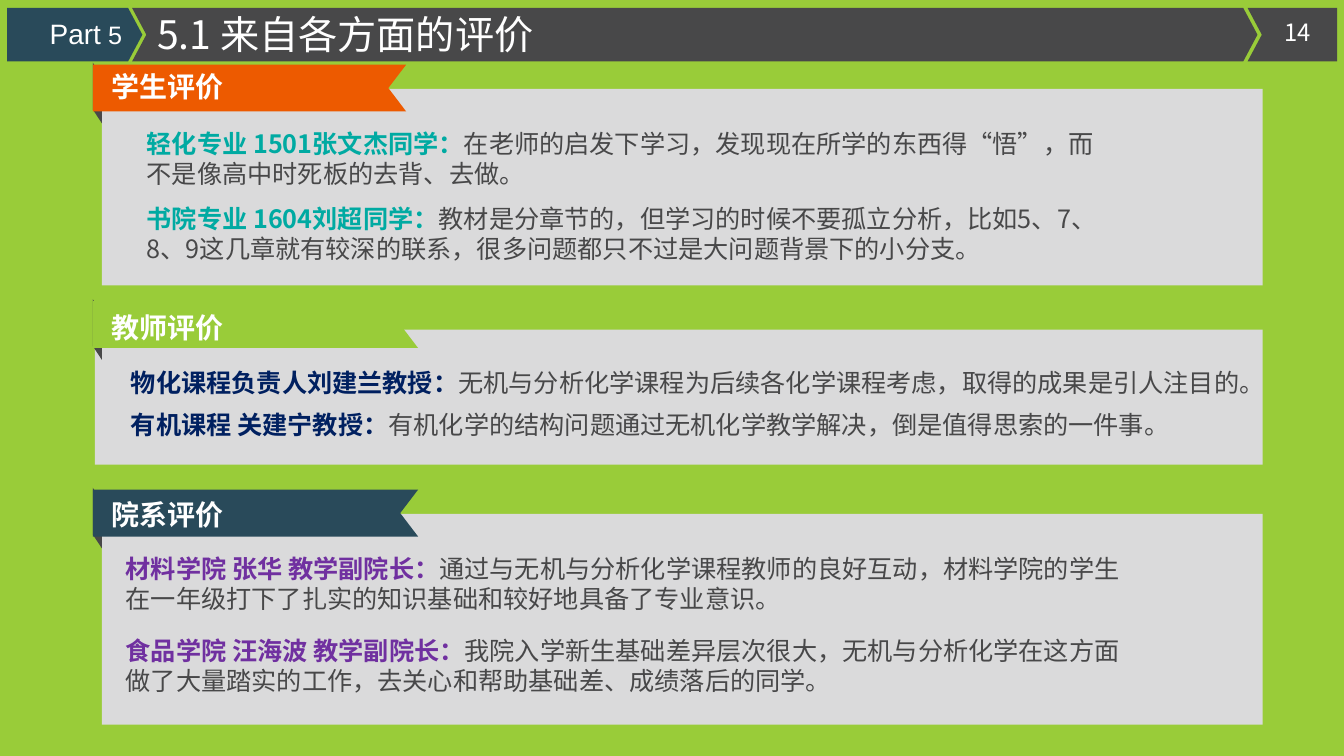
from dataclasses import dataclass
from pptx import Presentation
from pptx import util as u
from pptx.dml import color
from pptx.enum import lang, shapes, text
from pptx.oxml import ns
from lxml import etree


@dataclass(frozen=True)
class Theme:
    """Colours, fonts and type sizes of the deck."""
    green: str = "99CC39"
    navy: str = "294A5A"
    charcoal: str = "484849"
    panel: str = "DADADB"
    orange: str = "ED5A00"
    white: str = "FFFFFF"
    teal: str = "00AAA2"
    deep_blue: str = "002060"
    purple: str = "7030A0"
    latin: str = "Arial"
    chinese: str = "Noto Sans CJK SC"
    title_size: int = 28
    label_size: int = 20
    body_size: int = 18
    number_size: int = 17


THEME = Theme()
ALIGN = text.PP_ALIGN


@dataclass(frozen=True)
class Box:
    """A rectangle in centimetres."""
    left: float
    top: float
    width: float
    height: float

    def inner(self, dx, dy, width, height):
        """Return a box offset from this one's top left corner."""
        return Box(self.left + dx, self.top + dy, width, height)

    def lengths(self):
        """Return left, top, width and height as lengths."""
        return [u.Cm(n) for n in (self.left, self.top, self.width, self.height)]


@dataclass(frozen=True)
class Review:
    """One group of reviews: its label, look and quotes."""
    label: str
    box: Box
    flag_width: float
    flag_color: str
    label_drop: float
    panel_dx: float
    panel_dy: float
    name_color: str
    quote_dx: float
    quotes: tuple


REVIEWS = (
    Review("学生评价", Box(2.34, 1.63, 29.49, 5.56), 7.9, THEME.orange, 0, 0.23, 0.61,
           THEME.teal, 1.11, (
               (1.47, 24.79, "轻化专业 1501张文杰同学：",
                "在老师的启发下学习，发现现在所学的东西得“悟”，而不是像高中时死板的去背、去做。"),
               (3.37, 25.2, "书院专业 1604刘超同学：",
                "教材是分章节的，但学习的时候不要孤立分析，比如5、7、8、9这几章就有较深的联系，"
                "很多问题都只不过是大问题背景下的小分支。"))),
    Review("教师评价", Box(2.34, 7.59, 29.49, 4.12), 8.2, THEME.green, 0.1, 0.05, 0.72,
           THEME.deep_blue, 0.71, (
               (1.53, 29.57, "物化课程负责人刘建兰教授：",
                "无机与分析化学课程为后续各化学课程考虑，取得的成果是引人注目的。"),
               (2.6, 27.58, "有机课程 关建宁教授：",
                "有机化学的结构问题通过无机化学教学解决，倒是值得思索的一件事。"))),
    Review("院系评价", Box(2.34, 12.34, 29.49, 5.92), 8.2, THEME.navy, 0.08, 0.23, 0.61,
           THEME.purple, 0.58, (
               (1.48, 25.73, "材料学院 张华 教学副院长：",
                "通过与无机与分析化学课程教师的良好互动，材料学院的学生在一年级打下了扎实的"
                "知识基础和较好地具备了专业意识。"),
               (3.54, 25.73, "食品学院 汪海波 教学副院长：",
                "我院入学新生基础差异层次很大，无机与分析化学在这方面做了大量踏实的工作，"
                "去关心和帮助基础差、成绩落后的同学。"))),
)


def paint(shape, fill):
    """Give a shape a plain fill without line or shadow."""
    shape.fill.solid()
    shape.fill.fore_color.rgb = color.RGBColor.from_string(fill)
    shape.line.fill.background()
    shape.shadow.inherit = False


def add_outline(slide, points, fill):
    """Draw a closed polygon through points in centimetres."""
    start, *rest = [(u.Cm(x), u.Cm(y)) for x, y in points]
    builder = slide.shapes.build_freeform(*start, scale=1.0)
    builder.add_line_segments(rest, close=True)
    paint(builder.convert_to_shape(), fill)


def add_ribbon(slide, box, fill, left_depth=0, right_depth=0):
    """Draw a band whose side middles are shifted right by the depths."""
    right, bottom = box.left + box.width, box.top + box.height
    middle = box.top + box.height / 2
    add_outline(slide, [(box.left, box.top), (right, box.top),
                        (right + right_depth, middle), (right, bottom),
                        (box.left, bottom), (box.left + left_depth, middle)], fill)


def write(frame, pieces, font_name, align=ALIGN.LEFT):
    """Fill a frame with one paragraph of (words, size, colour, bold) runs."""
    frame.word_wrap = True
    frame.auto_size = text.MSO_AUTO_SIZE.NONE
    frame.vertical_anchor = text.MSO_ANCHOR.TOP
    paragraph = frame.paragraphs[0]
    paragraph.alignment = align
    for words, size, tint, bold in pieces:
        run = paragraph.add_run()
        run.text = words
        run.font.size = u.Pt(size)
        run.font.bold = bold
        run.font.name = font_name
        run.font.color.rgb = color.RGBColor.from_string(tint)
        run.font.language_id = lang.MSO_LANGUAGE_ID.SIMPLIFIED_CHINESE
        latin = run.font._element.find(ns.qn("a:latin"))
        east_asian = etree.Element(ns.qn("a:ea"), typeface=font_name)
        latin.addnext(east_asian)


def add_words(slide, box, pieces, font_name=THEME.chinese, align=ALIGN.LEFT):
    """Add a text box holding one paragraph."""
    write(slide.shapes.add_textbox(*box.lengths()).text_frame, pieces, font_name, align)


def add_header(slide, box):
    """Draw the chevron header with part, title and page number."""
    tip = 0.36
    add_ribbon(slide, box.inner(0, 0, 3.05, box.height), THEME.navy, 0, tip)
    add_ribbon(slide, box.inner(3.15, 0, 28.01, box.height), THEME.charcoal, tip, tip)
    add_ribbon(slide, box.inner(31.27, 0, box.width - 31.27, box.height),
               THEME.charcoal, tip, 0)
    add_words(slide, box.inner(31.87, 0.13, 1.32, 0.99),
              [("14", THEME.number_size, THEME.white, False)], align=ALIGN.CENTER)
    title = slide.shapes.title
    title.left, title.top, title.width, title.height = box.inner(
        3.53, -0.07, 14, 1.45).lengths()
    write(title.text_frame,
          [("5.1 来自各方面的评价", THEME.title_size, THEME.white, False)], THEME.chinese)
    title.element.getparent().append(title.element)
    add_words(slide, box.inner(0.2, 0.1, 2.95, 1.12),
              [("Part", THEME.label_size, THEME.white, False),
               (" 5", THEME.body_size, THEME.white, False)], THEME.latin, ALIGN.RIGHT)


def add_review(slide, box, review):
    """Draw one review group: panel, folded flag, label and quotes."""
    flag_height, fold_width, fold_drop = 1.18, 0.23, 0.35
    panel = box.inner(review.panel_dx, review.panel_dy,
                      box.width - review.panel_dx, box.height - review.panel_dy)
    paint(slide.shapes.add_shape(shapes.MSO_SHAPE.RECTANGLE, *panel.lengths()), THEME.panel)
    fold_top, fold_right = box.top - 0.05, box.left + fold_width
    add_outline(slide, [(box.left, fold_top), (fold_right, fold_top + fold_drop),
                        (fold_right, fold_top + fold_drop + flag_height),
                        (box.left, fold_top + flag_height)], THEME.charcoal)
    add_ribbon(slide, box.inner(0, 0, review.flag_width, flag_height),
               review.flag_color, right_depth=-0.45)
    add_words(slide, box.inner(fold_width, review.label_drop, 5, 1.12),
              [(review.label, THEME.label_size, THEME.white, True)])
    for quote_dy, width, name, quote in review.quotes:
        add_words(slide, box.inner(review.quote_dx, quote_dy, width, 1.8),
                  [(name, THEME.body_size, review.name_color, True),
                   (quote, THEME.body_size, THEME.charcoal, False)])


def main():
    """Build the slide and save the deck."""
    deck = Presentation()
    deck.slide_width, deck.slide_height = u.Cm(33.88), u.Cm(19.05)
    slide = deck.slides.add_slide(deck.slide_layouts[5])
    slide.background.fill.solid()
    slide.background.fill.fore_color.rgb = color.RGBColor.from_string(THEME.green)
    add_header(slide, Box(0.18, 0.2, 33.53, 1.35))
    for review in REVIEWS:
        add_review(slide, review.box, review)
    deck.save("out.pptx")


if __name__ == "__main__":
    main()
